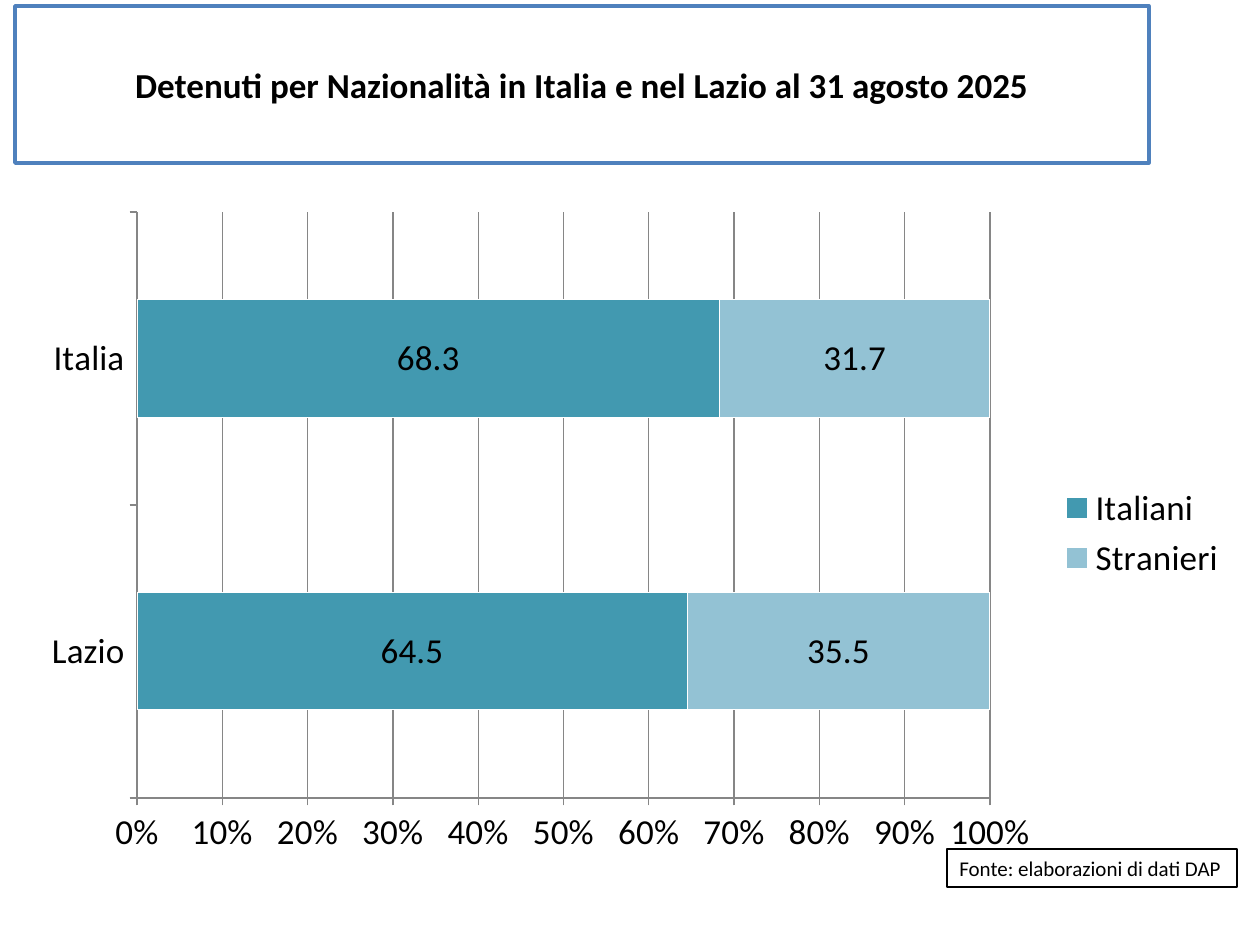
from lxml import etree
from pptx import Presentation
from pptx.chart.data import CategoryChartData
from pptx.dml.color import RGBColor
from pptx.enum.chart import XL_CHART_TYPE, XL_LABEL_POSITION, XL_LEGEND_POSITION, XL_TICK_MARK
from pptx.enum.shapes import MSO_SHAPE
from pptx.enum.text import MSO_ANCHOR, PP_ALIGN
from pptx.oxml.ns import qn
from pptx.util import Emu, Pt

TITLE = "Detenuti per Nazionalità in Italia e nel Lazio al 31 agosto 2025"
SOURCE = "Fonte: elaborazioni di dati DAP"
REGIONS = ["Lazio", "Italia"]
SHARES = [("Italiani", [64.5, 68.3], "teal"), ("Stranieri", [35.5, 31.7], "pale")]

COLORS = {"black": "000000", "white": "FFFFFF", "frame": "4F81BD",
          "teal": "4299B0", "pale": "93C2D4", "grid": "868686"}
FONT = "Calibri"
CHART_BOX = (29, 199, 1211, 668)
PLOT_BOX = (137, 212, 853, 586)


def px(value):
    return Emu(value * 914400 // 126)


def color(name):
    return RGBColor.from_string(COLORS[name])


def style_font(font, size, bold=False):
    font.name, font.size, font.bold = FONT, Pt(size), bold
    font.color.rgb = color("black")


def add_framed_text(slide, box, text, size, frame, frame_width, align, bold=False, wrap=True):
    panel = slide.shapes.add_shape(MSO_SHAPE.RECTANGLE, *map(px, box))
    panel.shadow.inherit = False
    panel.fill.solid()
    panel.fill.fore_color.rgb = color("white")
    panel.line.color.rgb = color(frame)
    panel.line.width = Pt(frame_width)
    panel.text_frame.word_wrap = wrap
    panel.text_frame.vertical_anchor = MSO_ANCHOR.MIDDLE
    paragraph = panel.text_frame.paragraphs[0]
    paragraph.text, paragraph.alignment = text, align
    style_font(paragraph.font, size, bold)


def fix_plot_area(chart):
    """Pin the inner plot area to PLOT_BOX, as fractions of CHART_BOX."""
    left, top, width, height = CHART_BOX
    x, y, w, h = PLOT_BOX
    settings = [("layoutTarget", "inner"), ("xMode", "edge"), ("yMode", "edge"),
                ("x", (x - left) / width), ("y", (y - top) / height),
                ("w", w / width), ("h", h / height)]
    plot_area = chart.plots[0]._element.getparent()
    layout = plot_area.find(qn("c:layout"))
    if layout is None:
        layout = etree.Element(qn("c:layout"))
        plot_area.insert(0, layout)
    manual = etree.SubElement(layout, qn("c:manualLayout"))
    for tag, value in settings:
        text = value if isinstance(value, str) else f"{value:.4f}"
        etree.SubElement(manual, qn(f"c:{tag}")).set("val", text)


def add_shares_chart(slide):
    data = CategoryChartData(number_format="0.0")
    data.categories = REGIONS
    for name, values, _ in SHARES:
        data.add_series(name, values)
    chart = slide.shapes.add_chart(
        XL_CHART_TYPE.BAR_STACKED_100, *map(px, CHART_BOX), data).chart
    style_font(chart.font, 20)
    chart.has_title = False
    chart.has_legend = True
    chart.legend.position = XL_LEGEND_POSITION.RIGHT
    chart.legend.include_in_layout = False
    fix_plot_area(chart)

    plot = chart.plots[0]
    plot.gap_width, plot.overlap = 150, 100
    plot.vary_by_categories = False
    for series, (_, _, fill) in zip(plot.series, SHARES):
        series.format.fill.solid()
        series.format.fill.fore_color.rgb = color(fill)
        series.format.line.color.rgb = color("white")
        labels = series.data_labels
        labels.show_value = True
        labels.position = XL_LABEL_POSITION.CENTER
        labels.number_format, labels.number_format_is_linked = "0.0", False
        style_font(labels.font, 20)

    shares_axis = chart.value_axis
    shares_axis.minimum_scale, shares_axis.maximum_scale = 0, 1
    shares_axis.major_unit = 0.1
    shares_axis.has_major_gridlines = True
    shares_axis.tick_labels.number_format = "0%"
    shares_axis.tick_labels.number_format_is_linked = False
    for axis in (chart.category_axis, shares_axis):
        axis.major_tick_mark = XL_TICK_MARK.OUTSIDE
        style_font(axis.tick_labels.font, 20)
    for part in (chart.category_axis, shares_axis, shares_axis.major_gridlines):
        part.format.line.color.rgb = color("grid")
        part.format.line.width = Pt(0.75)


def main():
    deck = Presentation()
    deck.slide_width, deck.slide_height = px(1260), px(945)
    slide = deck.slides.add_slide(deck.slide_layouts[6])
    add_framed_text(slide, (15, 6, 1134, 157), TITLE, 20, "frame", 2,
                    PP_ALIGN.CENTER, bold=True)
    add_shares_chart(slide)
    add_framed_text(slide, (947, 849, 290, 38), SOURCE, 12, "black", 0.75,
                    PP_ALIGN.LEFT, wrap=False)
    deck.save("out.pptx")


if __name__ == "__main__":
    main()
